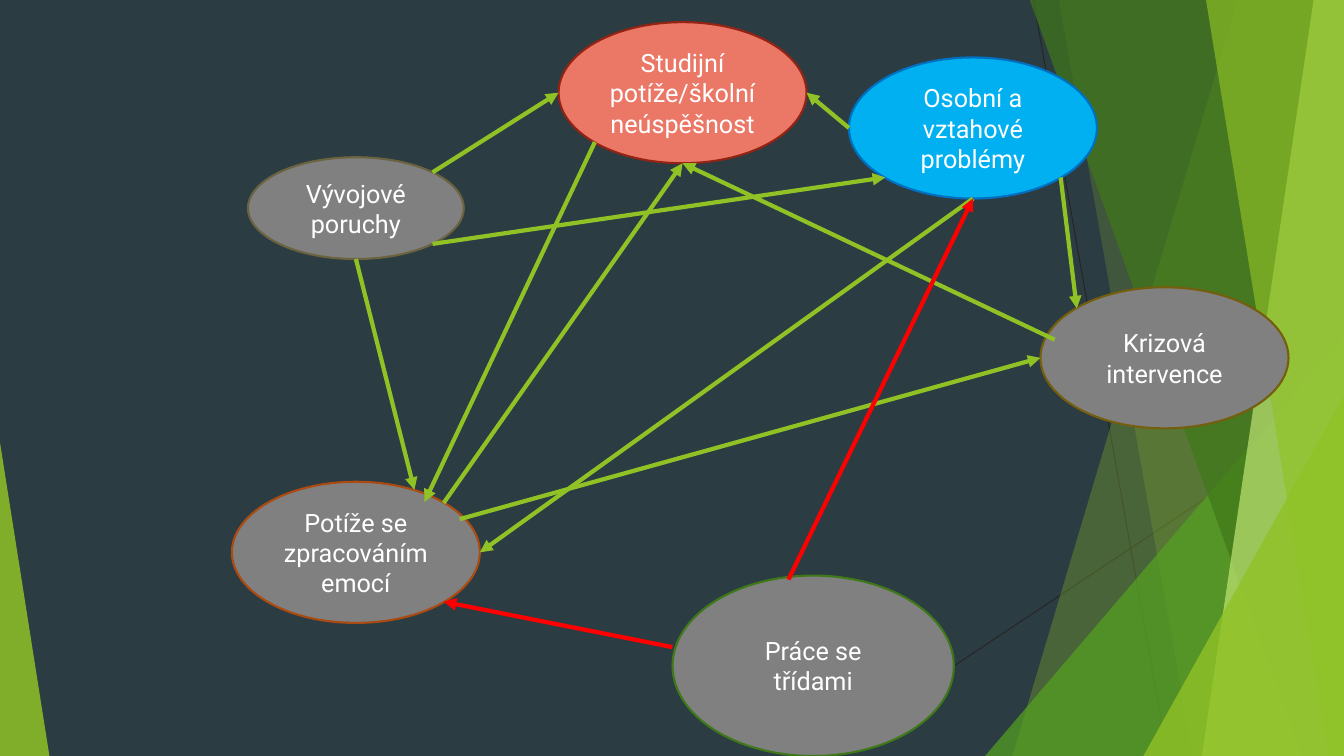
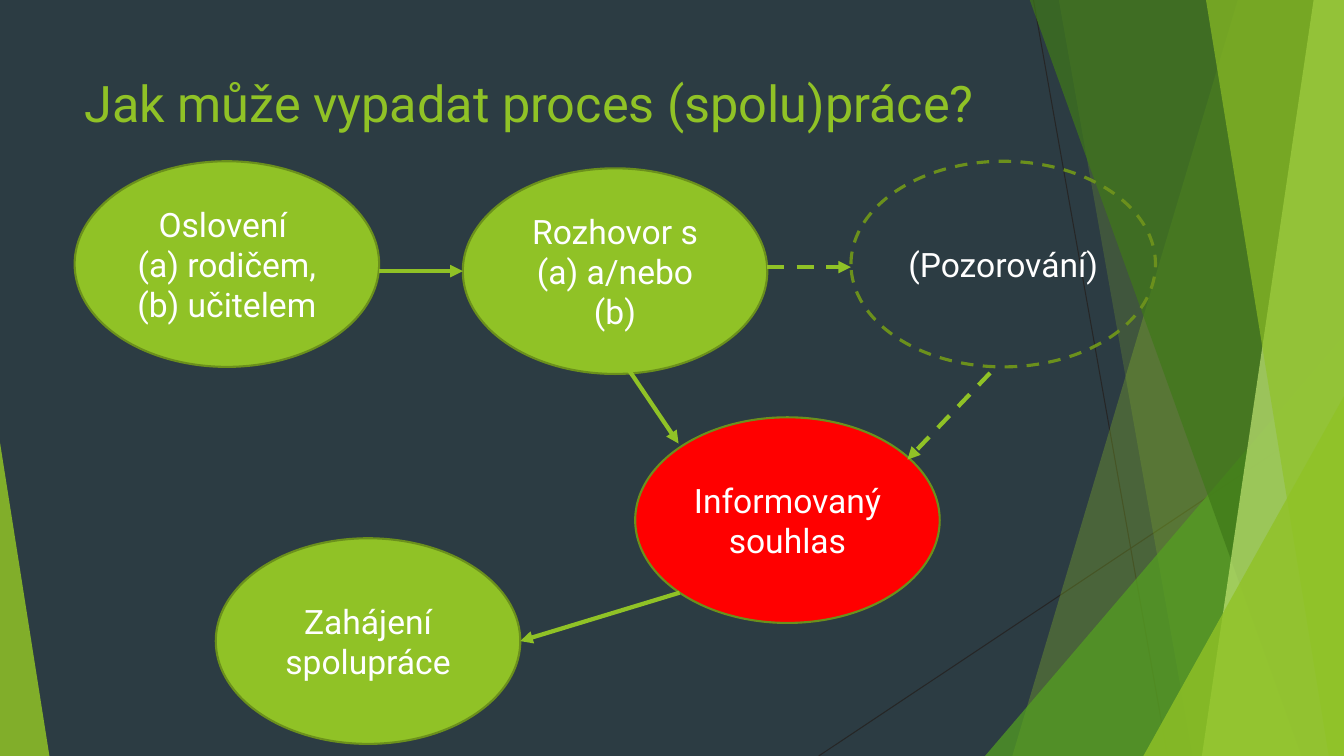
from dataclasses import dataclass
from math import cos, pi, sin

from lxml import etree
from pptx import Presentation
from pptx.dml.color import RGBColor
from pptx.enum.dml import MSO_LINE
from pptx.enum.shapes import MSO_CONNECTOR, MSO_SHAPE
from pptx.enum.text import MSO_ANCHOR, PP_ALIGN
from pptx.oxml.ns import qn
from pptx.util import Emu, Pt

OVAL, TRIANGLE = MSO_SHAPE.OVAL, MSO_SHAPE.ISOSCELES_TRIANGLE
STRAIGHT, DASH = MSO_CONNECTOR.STRAIGHT, MSO_LINE.DASH
MIDDLE, CENTER = MSO_ANCHOR.MIDDLE, PP_ALIGN.CENTER

EMU_PER_PX = 9144  # 100 px to the inch
WIDTH, HEIGHT = 1333, 750
FONT = "Roboto"
COLORS = {
    "bg": "2C3C43", "white": "FFFFFF", "hairline": "262626",
    "green": "90C226", "mid_green": "54A021", "dark_green": "3F7819",
    "pale_green": "C0E474", "green_edge": "6B901C",
    "grey": "808080", "olive": "6B633F", "rust": "AB4B12", "gold": "755E0D",
    "coral": "EB7766", "maroon": "932313",
    "sky": "00B0F0", "blue": "0070C0", "red": "FF0000",
}

# Ellipse connection sites, counter-clockwise from the top
TOP, TOP_LEFT, LEFT, BOTTOM_LEFT, BOTTOM, BOTTOM_RIGHT, RIGHT, TOP_RIGHT = range(8)


@dataclass
class Facet:
    """Band reaching the right edge, with a slanted left side."""
    top_x: int
    bottom_x: int
    color: str
    alpha: int


@dataclass
class Wedge:
    """Right-angled triangle standing on the bottom edge."""
    x: int
    y: int
    w: int
    peak: int
    color: str
    alpha: int


@dataclass
class Oval:
    text: str
    x: int
    y: int
    w: int
    h: int
    fill: str | None
    edge: str
    dashed: bool = False

    def site(self, idx: int) -> tuple[int, int]:
        angle = idx * pi / 4
        return (round(self.x + self.w / 2 * (1 - sin(angle))),
                round(self.y + self.h / 2 * (1 - cos(angle))))


# An arrow ends at a point (x, y) or at a site (oval key, index)
End = tuple[int, int] | tuple[str, int]


@dataclass
class Arrow:
    start: End
    end: End
    color: str = "green"
    dashed: bool = False


HAIRLINES = [(1025, 0, 1158, 750), (1333, 403, 812, 750)]
DECOR = [
    Facet(1228, 1004, "green", 30),
    Facet(1050, 1183, "green", 20),
    Wedge(977, 333, 356, 1, "mid_green", 72),
    Facet(1021, 1291, "dark_green", 70),
    Facet(1303, 1192, "pale_green", 70),
    Facet(1196, 1318, "green", 65),
    Wedge(1134, 393, 199, 1, "green", 80),
    Wedge(0, 439, 49, 0, "green", 85),
]

BIG = (246, 140)
TOPICS = {
    "disorders": Oval("Vývojové poruchy", 246, 156, 214, 101, "grey", "olive"),
    "emotions": Oval("Potíže se zpracováním emocí", 230, 478, *BIG, "grey", "rust"),
    "study": Oval("Studijní potíže/školní neúspěšnost", 554, 22, *BIG, "coral", "maroon"),
    "crisis": Oval("Krizová intervence", 1032, 285, *BIG, "grey", "gold"),
    "classes": Oval("Práce se třídami", 667, 571, 279, 179, "grey", "dark_green"),
    "personal": Oval("Osobní a vztahové problémy", 842, 57, *BIG, "sky", "blue"),
}
TOPIC_ARROWS = [
    Arrow(("disorders", BOTTOM), (411, 486)),
    Arrow(("emotions", TOP_RIGHT), ("study", BOTTOM)),
    Arrow(("disorders", TOP_RIGHT), ("study", LEFT)),
    Arrow((1046, 337), ("study", BOTTOM)),
    Arrow(("study", BOTTOM_LEFT), (421, 498)),
    Arrow(("personal", BOTTOM), ("emotions", RIGHT)),
    Arrow((456, 515), ("crisis", LEFT)),
    Arrow(("personal", LEFT), ("study", RIGHT)),
    Arrow(("disorders", BOTTOM_RIGHT), ("personal", BOTTOM_LEFT)),
    Arrow((782, 575), ("personal", BOTTOM), "red"),
    Arrow((667, 642), ("emotions", BOTTOM_RIGHT), "red"),
    Arrow(("personal", BOTTOM_RIGHT), ("crisis", TOP_LEFT)),
]

STEP = (302, 204)
STEPS = {
    "contact": Oval("Oslovení \v(a) rodičem, (b) učitelem", 74, 160, *STEP, "green", "green_edge"),
    "interview": Oval("Rozhovor s (a) a/nebo (b)", 459, 167, *STEP, "green", "green_edge"),
    "observation": Oval("(Pozorování)", 844, 160, *STEP, None, "green_edge", True),
    "consent": Oval("Informovaný souhlas", 630, 414, *STEP, "red", "green_edge"),
    "launch": Oval("Zahájení spolupráce", 214, 534, *STEP, "green", "green_edge"),
}
STEP_ARROWS = [
    Arrow((376, 269), ("interview", LEFT)),
    Arrow((761, 265), (844, 265), dashed=True),
    Arrow((982, 370), (900, 456), dashed=True),
    Arrow((619, 360), (673, 440)),
    Arrow(("consent", BOTTOM_LEFT), ("launch", RIGHT)),
]


def px(n: int) -> Emu:
    return Emu(n * EMU_PER_PX)


def rgb(name: str) -> RGBColor:
    return RGBColor.from_string(COLORS[name])


def style_text(p, size: int, color: str) -> None:
    p.font.name, p.font.size = FONT, Pt(size)
    p.font.color.rgb = rgb(color)


def add_line(slide, x1: int, y1: int, x2: int, y2: int, color: str, width: float):
    c = slide.shapes.add_connector(STRAIGHT, px(x1), px(y1), px(x2), px(y2))
    c.line.color.rgb = rgb(color)
    c.line.width = Pt(width)
    etree.SubElement(c._element.spPr, qn("a:effectLst"))
    return c


def add_decor(slide, part: Facet | Wedge):
    if isinstance(part, Facet):
        fb = slide.shapes.build_freeform(part.top_x, -1, scale=EMU_PER_PX)
        fb.add_line_segments([(WIDTH, -1), (WIDTH, HEIGHT), (part.bottom_x, HEIGHT)])
        sp = fb.convert_to_shape()
    else:
        sp = slide.shapes.add_shape(TRIANGLE, px(part.x), px(part.y),
                                    px(part.w), px(HEIGHT - part.y))
        sp.adjustments[0] = part.peak
    sp.shadow.inherit = False
    sp.line.fill.background()
    sp.fill.solid()
    sp.fill.fore_color.rgb = rgb(part.color)
    clr = sp._element.spPr.find(qn("a:solidFill"))[0]
    etree.SubElement(clr, qn("a:alpha"), val=str(part.alpha * 1000))
    return sp


def build_master(prs, slide) -> None:
    """Draw the shared backdrop on a slide, then move it to the master."""
    master = prs.slide_master
    master.background.fill.solid()
    master.background.fill.fore_color.rgb = rgb("bg")
    parts = [add_line(slide, *ends, "hairline", 0.75) for ends in HAIRLINES]
    parts += [add_decor(slide, part) for part in DECOR]
    for number, part in enumerate(parts, start=100):
        el = part._element
        el.xpath(".//p:cNvPr")[0].set("id", str(number))
        master.shapes._spTree.append(el)


def add_title(slide, text: str) -> None:
    tf = slide.shapes.add_textbox(px(74), px(67), px(940), px(144)).text_frame
    tf.word_wrap = True
    tf.text = text
    style_text(tf.paragraphs[0], 36, "green")


def add_oval(slide, oval: Oval, size: int):
    sp = slide.shapes.add_shape(OVAL, px(oval.x), px(oval.y), px(oval.w), px(oval.h))
    sp.shadow.inherit = False
    if oval.fill:
        sp.fill.solid()
        sp.fill.fore_color.rgb = rgb(oval.fill)
    else:
        sp.fill.background()
    sp.line.color.rgb = rgb(oval.edge)
    sp.line.width = Pt(2.25 if oval.dashed else 1.5)
    if oval.dashed:
        sp.line.dash_style = DASH
    tf = sp.text_frame
    tf.word_wrap = True
    tf.vertical_anchor = MIDDLE
    p = tf.paragraphs[0]
    p.text = oval.text
    p.alignment = CENTER
    style_text(p, size, "white")
    return sp


def add_arrow(slide, arrow: Arrow, ovals: dict[str, Oval], shapes: dict) -> None:
    ends = {"a:stCxn": arrow.start, "a:endCxn": arrow.end}
    points = [ovals[a].site(b) if isinstance(a, str) else (a, b) for a, b in ends.values()]
    c = add_line(slide, *points[0], *points[1], arrow.color, 3)
    if arrow.dashed:
        c.line.dash_style = DASH
    etree.SubElement(c._element.spPr.find(qn("a:ln")), qn("a:tailEnd"), type="triangle")
    # Join the arrow to the ellipse sites it touches
    joints = c._element.nvCxnSpPr.cNvCxnSpPr
    for tag, (key, idx) in ends.items():
        if isinstance(key, str):
            etree.SubElement(joints, qn(tag), id=str(shapes[key].shape_id), idx=str(idx))


def add_diagram(slide, ovals: dict[str, Oval], arrows: list[Arrow], size: int) -> None:
    shapes = {key: add_oval(slide, oval, size) for key, oval in ovals.items()}
    for arrow in arrows:
        add_arrow(slide, arrow, ovals, shapes)


def main() -> None:
    prs = Presentation()
    prs.slide_width, prs.slide_height = px(WIDTH), px(HEIGHT)
    blank = prs.slide_layouts[6]

    # Map of topics
    s = prs.slides.add_slide(blank)
    build_master(prs, s)
    add_diagram(s, TOPICS, TOPIC_ARROWS, 18)

    # Steps of the process
    s = prs.slides.add_slide(blank)
    add_title(s, "Jak může vypadat proces (spolu)práce?")
    add_diagram(s, STEPS, STEP_ARROWS, 24)

    prs.save("out.pptx")


if __name__ == "__main__":
    main()
